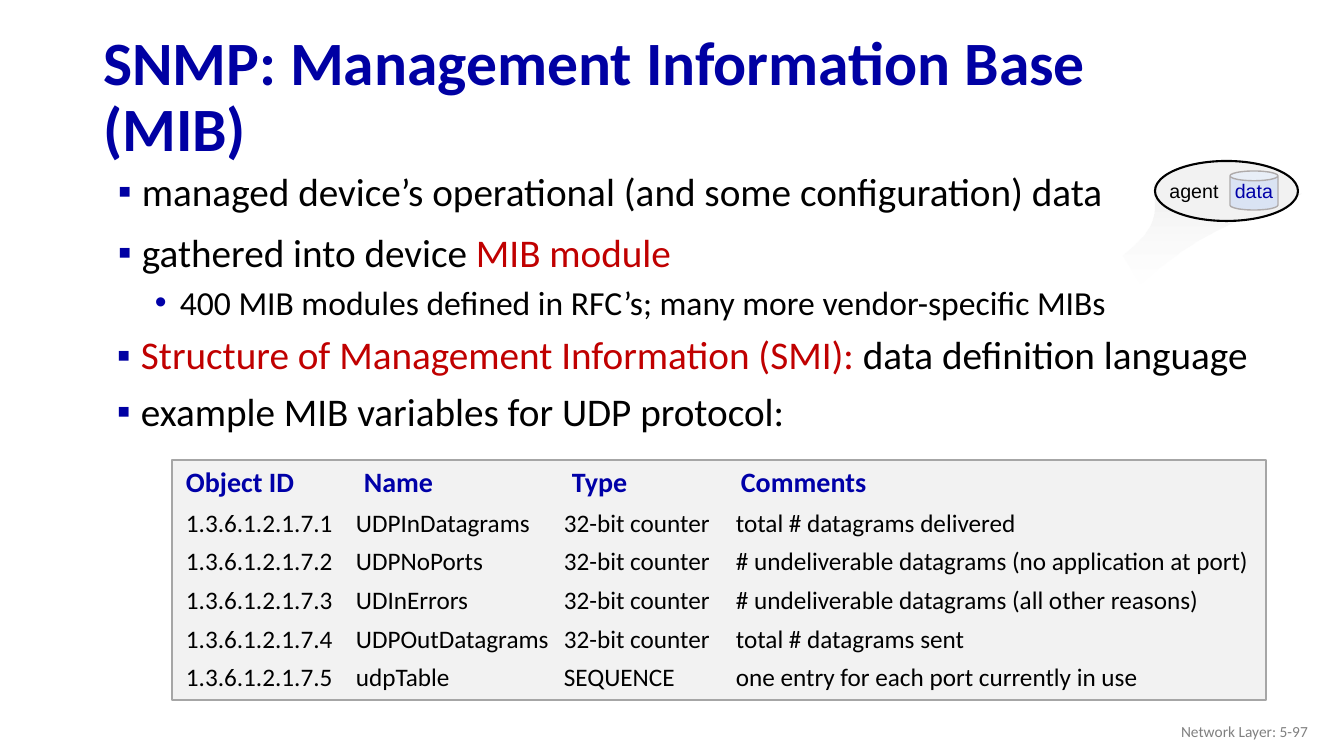
from pptx import Presentation
from pptx import util as u
from pptx.dml.color import RGBColor
from pptx.enum import shapes, text
from pptx.oxml.ns import qn
from lxml import etree

SCALE = 12192000 / 1344
BLUE, NAVY, RED, BLACK, PALE = "0000A3", "0000A8", "C00000", "000000", "F2F2F2"

TITLE = "SNMP: Management Information Base (MIB)"
FOOTER = "Network Layer: 5-97"
BODY_BOXES = [
    ((93, 162, 1187, 181), 1.0, [
        (0, [("managed device’s operational (and some configuration) data", BLACK)]),
        (0, [("gathered into device ", BLACK), ("MIB module", RED)]),
        (1, [("400 MIB modules defined in RFC’s; many more vendor-specific MIBs", BLACK)]),
    ]),
    ((92, 331, 1187, 111), 0.9, [
        (0, [("Structure of Management Information (SMI): ", RED),
             ("data definition language", BLACK)]),
        (0, [("example MIB variables for UDP protocol:", BLACK)]),
    ]),
]
LEVELS = [
    dict(size=28, before=10, margin=39, hang=24, bullet="▪", color=BLUE),
    dict(size=24, before=5, margin=77, hang=25, bullet="•", color=NAVY),
]
MIB_HEADER = ("Object ID", "Name", "Type", "Comments")
MIB_ROWS = [
    ("1.3.6.1.2.1.7.1", "UDPInDatagrams", "32-bit counter", "total # datagrams delivered"),
    ("1.3.6.1.2.1.7.2", "UDPNoPorts", "32-bit counter",
     "# undeliverable datagrams (no application at port)"),
    ("1.3.6.1.2.1.7.3", "UDInErrors", "32-bit counter",
     "# undeliverable datagrams (all other reasons)"),
    ("1.3.6.1.2.1.7.4", "UDPOutDatagrams", "32-bit counter", "total # datagrams sent"),
    ("1.3.6.1.2.1.7.5", "udpTable", "SEQUENCE", "one entry for each port currently in use"),
]
HEADER_STOPS = (178, 386, 555)
ROW_STOPS = (170, 378, 550)
BEAM_CURVES = [
    [(1123, 255), (1158, 227), (1157, 216), (1154, 184)],
    [(1301, 194), (1214, 229), (1192, 240), (1141, 283)],
]
AGENT_LABELS = [
    ("agent", (1154, 174, 80, 34), BLACK),
    ("data", (1214, 174, 80, 34), NAVY),
]


def px(value):
    return round(value * SCALE)


def box(lengths):
    return [px(value) for value in lengths]


def rgb(color):
    return RGBColor.from_string(color)


def format_run(run, size, color, font="Calibri", bold=False):
    run.font.size, run.font.name, run.font.bold = u.Pt(size), font, bold
    run.font.color.rgb = rgb(color)


def add_text(parent, lengths, wrap=True):
    frame = parent.add_textbox(*box(lengths)).text_frame
    frame.word_wrap = wrap
    return frame


def next_paragraph(frame, index):
    return frame.add_paragraph() if index else frame.paragraphs[0]


def add_preset(parent, kind, lengths, fill, line, width):
    shape = parent.add_shape(kind, *box(lengths))
    shape.shadow.inherit = False
    shape.fill.solid()
    shape.fill.fore_color.rgb = rgb(fill)
    shape.line.color.rgb = rgb(line)
    shape.line.width = u.Pt(width)
    return shape


def set_bullet(paragraph, level):
    properties = paragraph._p.get_or_add_pPr()
    properties.set("marL", str(px(level["margin"])))
    properties.set("indent", str(-px(level["hang"])))
    color = etree.SubElement(properties, qn("a:buClr"))
    etree.SubElement(color, qn("a:srgbClr"), val=level["color"])
    etree.SubElement(properties, qn("a:buFont"), typeface="Arial")
    etree.SubElement(properties, qn("a:buChar"), char=level["bullet"])


def set_tab_stops(paragraph, stops):
    tabs = etree.SubElement(paragraph._p.get_or_add_pPr(), qn("a:tabLst"))
    for stop in stops:
        etree.SubElement(tabs, qn("a:tab"), pos=str(px(stop)), algn="l")


def curve_points(curve, steps=16):
    for step in range(steps + 1):
        t = step / steps
        weights = ((1 - t) ** 3, 3 * t * (1 - t) ** 2, 3 * t * t * (1 - t), t ** 3)
        yield tuple(px(sum(w * point[axis] for w, point in zip(weights, curve)))
                    for axis in (0, 1))


def add_title(slide):
    title = slide.shapes.title
    title.left, title.top, title.width, title.height = box((93, 49, 1159, 99))
    frame = title.text_frame
    frame.text = TITLE
    frame.word_wrap = True
    frame.auto_size = text.MSO_AUTO_SIZE.NONE
    frame.vertical_anchor = text.MSO_ANCHOR.MIDDLE
    paragraph = frame.paragraphs[0]
    paragraph.alignment = text.PP_ALIGN.LEFT
    paragraph.line_spacing = 0.9
    format_run(paragraph.runs[0], 44, BLUE, bold=True)


def add_body(slide):
    for lengths, spacing, items in BODY_BOXES:
        frame = add_text(slide.shapes, lengths)
        for index, (depth, pieces) in enumerate(items):
            level = LEVELS[depth]
            paragraph = next_paragraph(frame, index)
            paragraph.line_spacing = spacing
            paragraph.space_before = u.Pt(level["before"])
            set_bullet(paragraph, level)
            for words, color in pieces:
                run = paragraph.add_run()
                run.text = words
                format_run(run, level["size"], color)


def add_mib_listing(slide):
    group = slide.shapes.add_group_shape().shapes
    add_preset(group, shapes.MSO_SHAPE.RECTANGLE, (172, 460, 1094, 240), PALE, "A6A6A6", 1)
    frame = add_text(group, (176, 460, 1103, 239))
    for index, cells in enumerate([MIB_HEADER] + MIB_ROWS):
        header = index == 0
        paragraph = next_paragraph(frame, index)
        paragraph.text = "\t".join(cells)
        paragraph.space_before = u.Pt(0 if header else 6)
        set_tab_stops(paragraph, HEADER_STOPS if header else ROW_STOPS)
        format_run(paragraph.runs[0], 20 if header else 18, NAVY if header else BLACK, bold=header)


def add_agent(slide):
    group = slide.shapes.add_group_shape().shapes
    points = [point for curve in BEAM_CURVES for point in curve_points(curve)]
    builder = group.build_freeform(*points[0], scale=1.0)
    builder.add_line_segments(points[1:], close=True)
    beam = builder.convert_to_shape()
    beam.shadow.inherit = False
    beam.line.fill.background()
    beam.fill.gradient()
    beam.fill.gradient_angle = 90
    for stop, color in zip(beam.fill.gradient_stops, ("FFFFFF", PALE)):
        stop.color.rgb = rgb(color)
    first_color = next(beam._element.iter(qn("a:srgbClr")))
    etree.SubElement(first_color, qn("a:alpha"), val="72000")

    add_preset(group, shapes.MSO_SHAPE.OVAL, (1155, 161, 143, 60), PALE, BLACK, 1.5)
    add_preset(group, shapes.MSO_SHAPE.CAN, (1230, 171, 48, 39), "DAE3F3", "AFABAB", 1)
    for words, lengths, color in AGENT_LABELS:
        frame = add_text(group, lengths, wrap=False)
        frame.text = words
        frame.paragraphs[0].alignment = text.PP_ALIGN.CENTER
        format_run(frame.paragraphs[0].runs[0], 14, color, "Arial")


def add_footer(slide):
    frame = add_text(slide.shapes, (1016, 711, 302, 40))
    frame.text = FOOTER
    frame.vertical_anchor = text.MSO_ANCHOR.MIDDLE
    frame.paragraphs[0].alignment = text.PP_ALIGN.RIGHT
    format_run(frame.paragraphs[0].runs[0], 11, "808080")


def main():
    presentation = Presentation()
    presentation.slide_width, presentation.slide_height = px(1344), px(756)
    slide = presentation.slides.add_slide(presentation.slide_layouts[5])
    add_title(slide)
    add_body(slide)
    add_mib_listing(slide)
    add_agent(slide)
    add_footer(slide)
    presentation.save("out.pptx")


if __name__ == "__main__":
    main()
